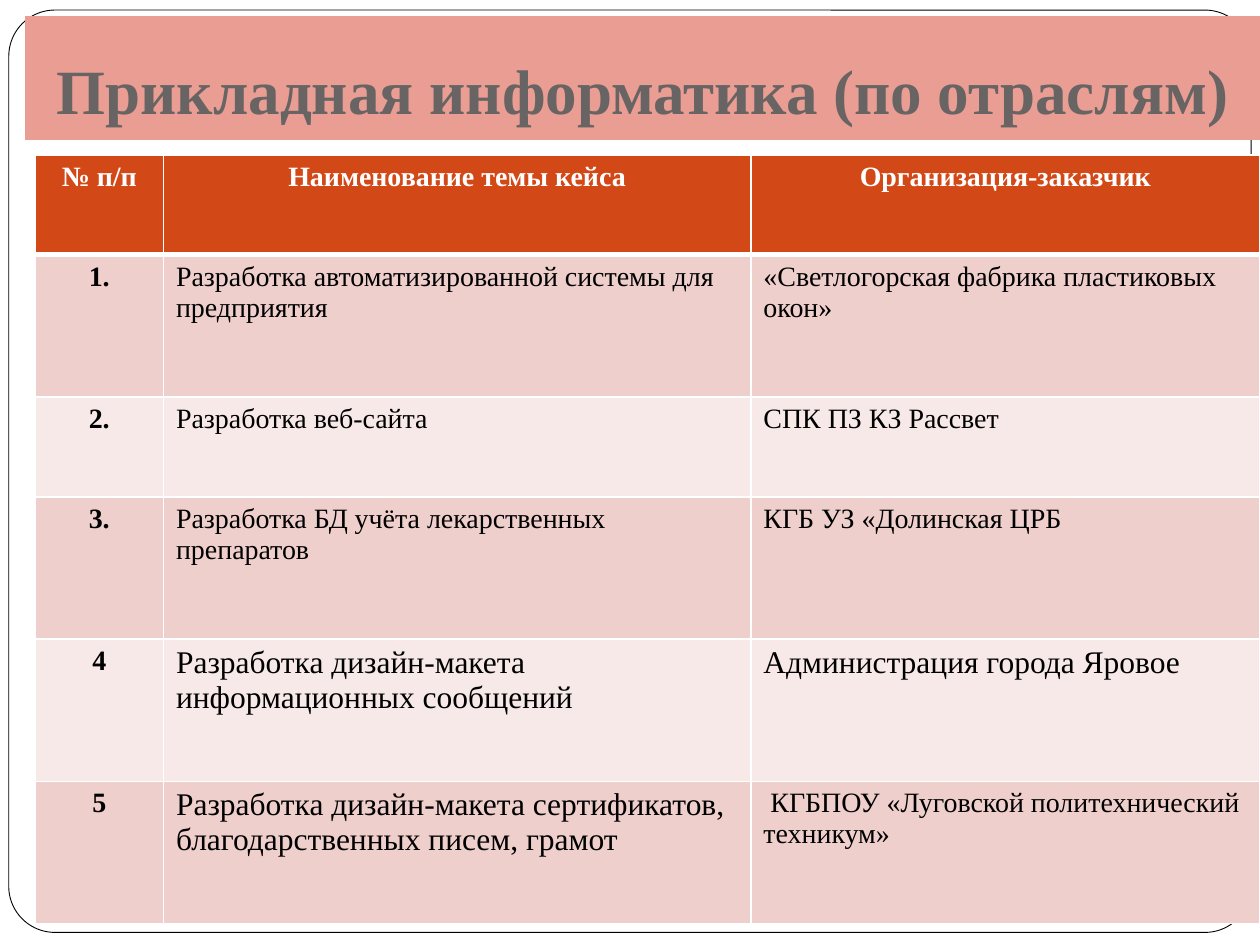
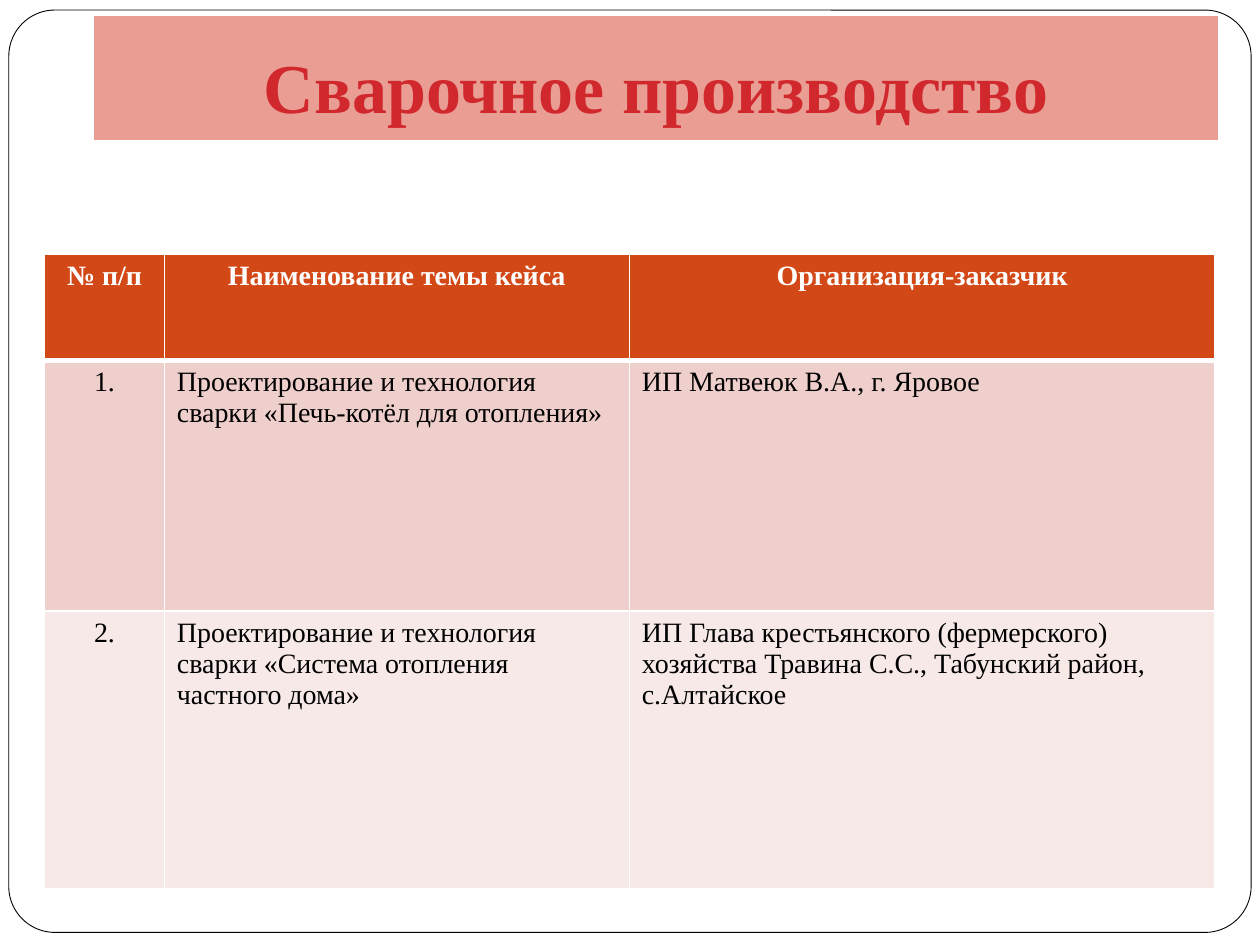
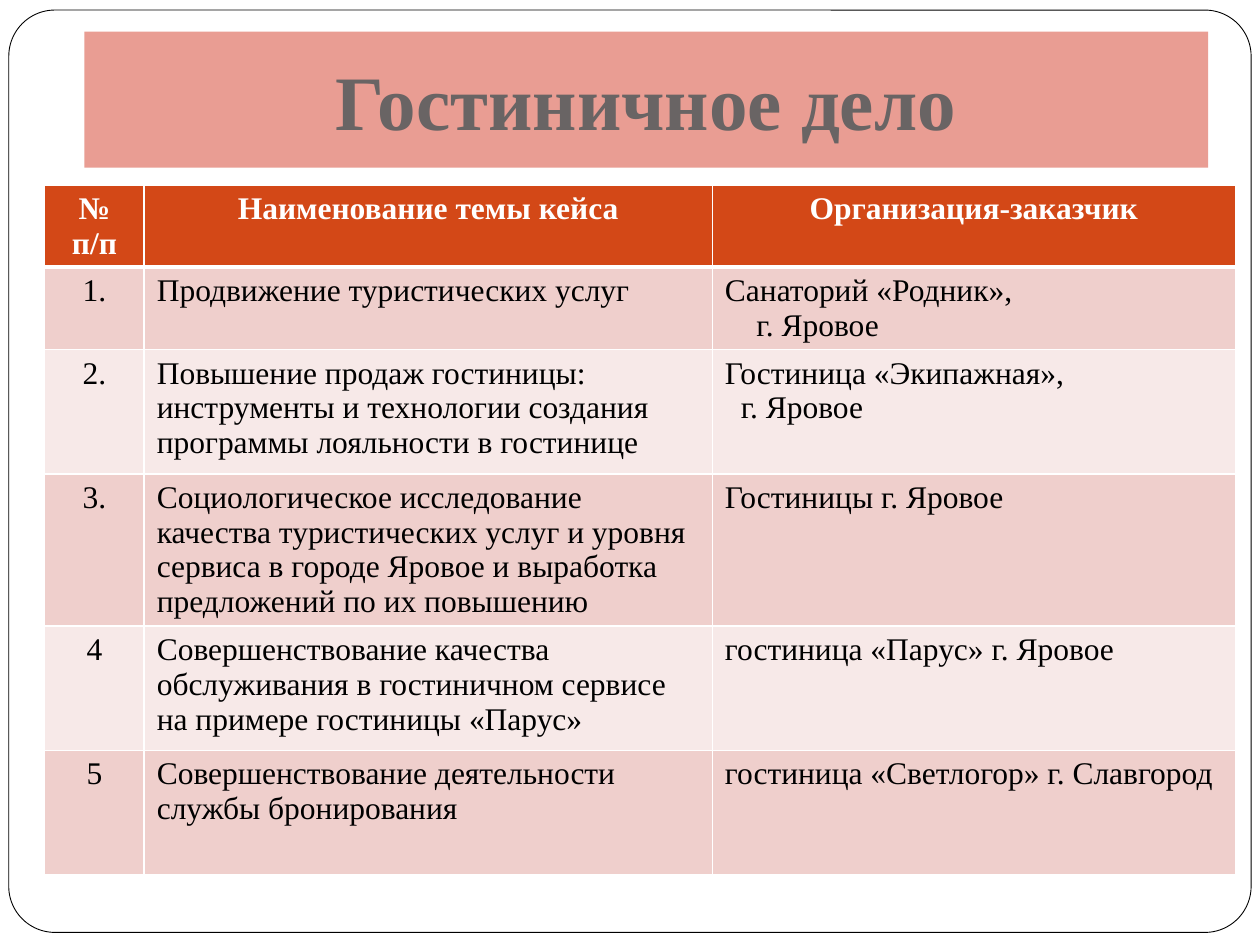
from lxml.etree import SubElement
from pptx import Presentation
from pptx.dml.color import RGBColor
from pptx.enum.shapes import MSO_SHAPE as SHAPE
from pptx.enum.text import MSO_ANCHOR as ANCHOR, PP_ALIGN as ALIGN
from pptx.oxml.ns import qn
from pptx.util import Pt

COLORS = {
    "white": "FFFFFF",
    "black": "000000",
    "band": "E99D93",
    "gray": "696464",
    "red": "D1282E",
    "header": "D34817",
    "odd": "EFCFCC",
    "even": "F7E9E8",
}
FONT = "Times New Roman"
HEADINGS = ("№ п/п", "Наименование темы кейса", "Организация-заказчик")


def rgb(name):
    return RGBColor.from_string(COLORS[name])


class Deck:
    def __init__(self, width, height):
        self.prs = Presentation()
        self.prs.slide_width, self.prs.slide_height = Pt(width), Pt(height)
        self.s = None

    def slide(self):
        """Start a slide with the rounded page frame."""
        self.s = self.prs.slides.add_slide(self.prs.slide_layouts[6])
        frame = self.box(SHAPE.ROUNDED_RECTANGLE, (5.04, 5.76, 709.92, 527.04), "white")
        frame.adjustments[0] = 0.05
        frame.line.color.rgb = rgb("black")
        frame.line.width = Pt(0.5)

    def box(self, kind, at, color):
        sp = self.s.shapes.add_shape(kind, *map(Pt, at))
        sp.shadow.inherit = False
        sp.fill.solid()
        sp.fill.fore_color.rgb = rgb(color)
        sp.line.fill.background()
        return sp

    def text(self, p, text, color, size, bold, align):
        p.alignment = align
        r = p.add_run()
        r.text = text
        for name, value in {"name": FONT, "size": Pt(size), "bold": bold}.items():
            setattr(r.font, name, value)
        r.font.color.rgb = rgb(color)

    def title(self, text, at, size, color="gray", anchor=ANCHOR.BOTTOM, bottom=7.2):
        tf = self.box(SHAPE.RECTANGLE, at, "band").text_frame
        layout = {
            "word_wrap": True,
            "vertical_anchor": anchor,
            "margin_left": Pt(7.2),
            "margin_right": Pt(7.2),
            "margin_top": Pt(3.6),
            "margin_bottom": Pt(bottom),
        }
        for name, value in layout.items():
            setattr(tf, name, value)
        self.text(tf.paragraphs[0], text, color, size, True, ALIGN.CENTER)

    def borders(self, cell, **widths):
        tc_pr = cell._tc.get_or_add_tcPr()
        for side in "LRTB":
            ln = SubElement(tc_pr, qn(f"a:ln{side}"), w=str(Pt(widths.get(side, 1))))
            fill = SubElement(ln, qn("a:solidFill"))
            SubElement(fill, qn("a:srgbClr"), val=COLORS["white"])

    def table(self, left, top, widths, heights, cases, size,
              bold_numbers=False, sizes=None, indents=None):
        """Add a case table; sizes go by (row, column), indents by (row, column, paragraph)."""
        sizes, indents = sizes or {}, indents or {}
        rows = [HEADINGS, *cases]
        at = (left, top, sum(widths), sum(heights))
        table = self.s.shapes.add_table(len(rows), len(widths), *map(Pt, at)).table
        table.first_row = table.horz_banding = False
        for column, width in zip(table.columns, widths):
            column.width = Pt(width)
        for i, (row, height) in enumerate(zip(rows, heights)):
            table.rows[i].height = Pt(height)
            head = i == 0
            fill = "header" if head else "odd" if i % 2 else "even"
            for j, text in enumerate(row):
                cell = table.cell(i, j)
                self.borders(cell, T=3 if i == 1 else 1, B=3 if head else 1)
                cell.fill.solid()
                cell.fill.fore_color.rgb = rgb(fill)
                tf = cell.text_frame
                for k, line in enumerate(text.split("\n")):
                    p = tf.add_paragraph() if k else tf.paragraphs[0]
                    self.text(p, line, "white" if head else "black",
                              sizes.get((i, j), size),
                              head or (bold_numbers and j == 0),
                              ALIGN.CENTER if head or j == 0 else ALIGN.LEFT)
                    if (i, j, k) in indents:
                        p._p.get_or_add_pPr().set("indent", str(Pt(indents[i, j, k])))


def informatics(deck):
    deck.slide()
    deck.title("Прикладная информатика (по отраслям)", (14.4, 9.2, 705.6, 70.8), 36)
    cases = [
        ("1.", "Разработка автоматизированной системы для предприятия",
         "«Светлогорская фабрика пластиковых окон»"),
        ("2.", "Разработка веб-сайта", "СПК ПЗ КЗ Рассвет"),
        ("3.", "Разработка БД учёта лекарственных препаратов", "КГБ УЗ «Долинская ЦРБ"),
        ("4", "Разработка дизайн-макета информационных сообщений",
         "Администрация города Яровое"),
        ("5", "Разработка дизайн-макета сертификатов, благодарственных писем, грамот",
         "КГБПОУ «Луговской политехнический техникум»"),
    ]
    deck.table(20, 88.6, (73.4, 335.7, 290.9), (57, 81.3, 57, 81.3, 81.3, 81.3),
               cases, 16, bold_numbers=True,
               sizes={(4, 1): 18, (4, 2): 18, (5, 1): 18}, indents={(5, 2, 0): 4})


def welding(deck):
    deck.slide()
    deck.title("Сварочное производство", (53.8, 9.2, 642.2, 70.8), 40, "red")
    cases = [
        ("1.", "Проектирование и технология сварки «Печь-котёл для отопления»",
         "ИП Матвеюк В.А., г. Яровое"),
        ("2.", "Проектирование и технология сварки «Система отопления частного дома»",
         "ИП Глава крестьянского (фермерского) хозяйства Травина С.С., "
         "Табунский район, с.Алтайское"),
    ]
    deck.table(25.5, 145.4, (68.4, 265.7, 334.8), (60.5, 143.3, 158.4), cases, 16)


def hospitality(deck):
    deck.slide()
    cases = [
        ("1.", "Продвижение туристических услуг", "Санаторий «Родник»,\nг. Яровое"),
        ("2.", "Повышение продаж гостиницы: инструменты и технологии создания "
         "программы лояльности в гостинице", "Гостиница «Экипажная»,\nг. Яровое"),
        ("3.", "Социологическое исследование качества туристических услуг и уровня "
         "сервиса в городе Яровое и выработка предложений по их повышению",
         "Гостиницы г. Яровое"),
        ("4", "Совершенствование качества обслуживания в гостиничном сервисе "
         "на примере гостиницы «Парус»", "гостиница «Парус» г. Яровое"),
        ("5", "Совершенствование деятельности службы бронирования",
         "гостиница «Светлогор» г. Славгород"),
    ]
    deck.table(25.5, 105.6, (56.9, 324.7, 298.8), (47, 47, 71, 87, 71, 71), cases, 18,
               indents={(1, 2, 1): 18, (2, 2, 1): 9})
    deck.title("Гостиничное дело", (48.2, 18, 642.2, 77.8), 44,
               anchor=ANCHOR.MIDDLE, bottom=3.6)


def main():
    deck = Deck(720, 540)
    for build in (informatics, welding, hospitality):
        build(deck)
    deck.prs.save("out.pptx")


if __name__ == "__main__":
    main()
